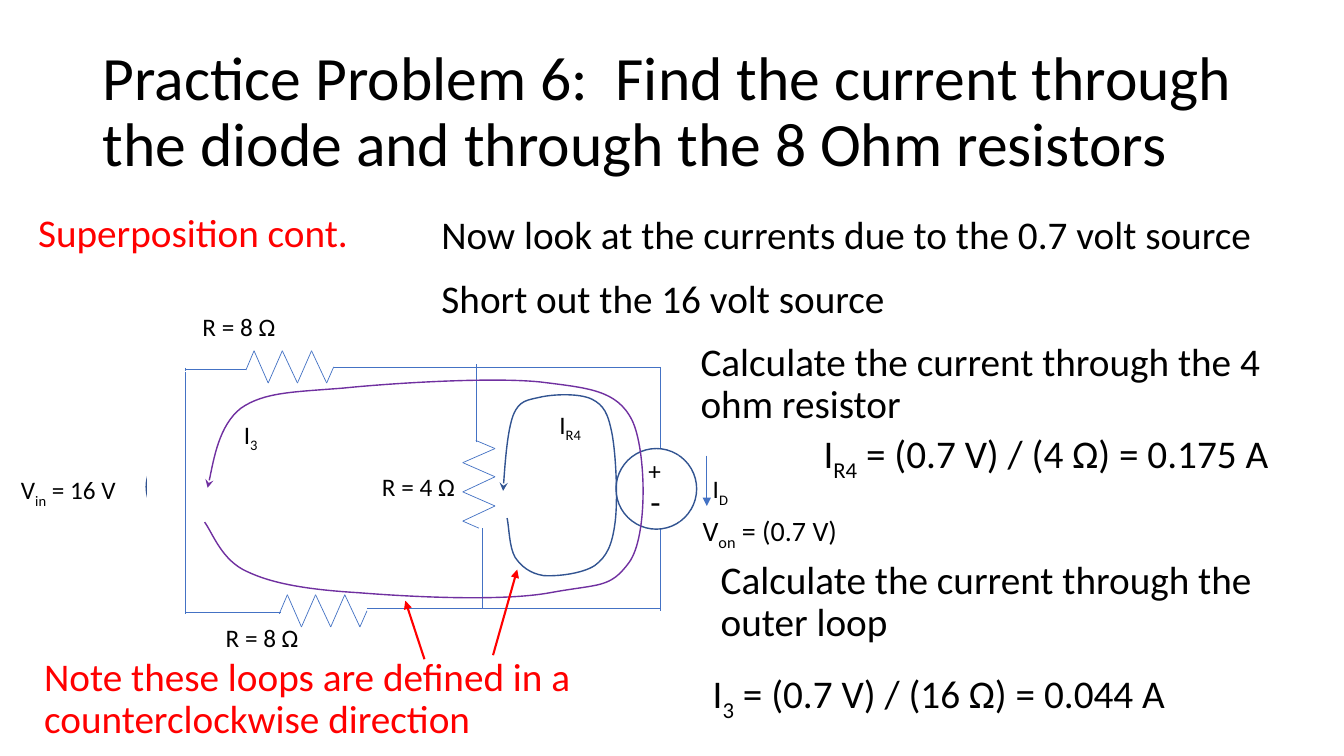
from dataclasses import dataclass
from itertools import chain, pairwise

from lxml import etree
from pptx import Presentation
from pptx.dml.color import RGBColor
from pptx.enum.shapes import MSO_CONNECTOR, MSO_SHAPE
from pptx.enum.text import MSO_ANCHOR, MSO_AUTO_SIZE, PP_ALIGN
from pptx.oxml.ns import qn
from pptx.shapes.autoshape import Shape
from pptx.shapes.shapetree import SlideShapes
from pptx.text.text import TextFrame
from pptx.util import Pt

PX = 9144
FONT = "Calibri"
TITLE_ONLY = 5
STRAIGHT = MSO_CONNECTOR.STRAIGHT
OVAL, RECTANGLE = MSO_SHAPE.OVAL, MSO_SHAPE.RECTANGLE
TOP, MIDDLE = MSO_ANCHOR.TOP, MSO_ANCHOR.MIDDLE
LEFT = PP_ALIGN.LEFT
NO_AUTOFIT, GROW = MSO_AUTO_SIZE.NONE, MSO_AUTO_SIZE.SHAPE_TO_FIT_TEXT

BLACK = RGBColor(0x00, 0x00, 0x00)
WHITE = RGBColor(0xFF, 0xFF, 0xFF)
RED = RGBColor(0xFF, 0x00, 0x00)
WIRE_BLUE = RGBColor(0x44, 0x72, 0xC4)
OUTLINE_BLUE = RGBColor(0x32, 0x54, 0x91)
PURPLE = RGBColor(0x70, 0x30, 0xA0)

Point = tuple[int, int]
Box = tuple[int, int, int, int]


@dataclass(frozen=True)
class Label:
    box: Box
    runs: tuple[str, ...]
    size: int = 18


@dataclass(frozen=True)
class Note:
    box: Box
    runs: tuple[str, ...]
    size: int = 28
    color: RGBColor = BLACK


@dataclass(frozen=True)
class Arrow:
    start: Point
    end: Point
    color: RGBColor
    width: float


@dataclass(frozen=True)
class Loop:
    start: Point
    curves: tuple[tuple[Point, Point, Point], ...]
    color: RGBColor


ZIGZAG = ((0, 0), (8, -19), (22, 13), (36, -19), (51, 13), (65, -19), (80, 13), (87, -3))
TOP_RESISTOR = [(244 + along, 367 + across) for along, across in ZIGZAG]
BOTTOM_RESISTOR = [(277 + along, 609 + across) for along, across in ZIGZAG]
MIDDLE_RESISTOR = [(472 - across, 437 + along) for along, across in ZIGZAG]

WIRES = (
    [(184, 365), (184, 443)],
    [(184, 523), (184, 608)],
    [(184, 366), (244, 366)],
    TOP_RESISTOR,
    [(331, 364), (655, 364), (655, 464)],
    [(655, 507), (655, 606)],
    [(675, 508), (635, 508)],
    [(364, 604), (655, 604)],
    MIDDLE_RESISTOR,
    [(472, 439), (472, 361)],
    [(478, 604), (478, 524)],
    BOTTOM_RESISTOR,
    [(184, 608), (279, 608)],
)
SHORTED_SOURCE_WIRE = [(184, 609), (184, 369)]

CIRCUIT_LABELS = (
    Label((11, 466, 137, 40), ("V", "in", " = 16 V")),
    Label((191, 304, 118, 40), ("R = 8 Ω",)),
    Label((697, 465, 71, 40), ("I", "D")),
    Label((369, 463, 118, 40), ("R = 4 Ω",)),
    Label((214, 612, 118, 40), ("R = 8 Ω",)),
    Label((545, 401, 50, 40), ("I", "R4")),
    Label((232, 411, 50, 40), ("I", "3")),
)
POLARITY_SIGNS = (
    Label((643, 452, 30, 30), ("+",)),
    Label((645, 477, 29, 40), ("-",), 24),
)
NOTES = (
    Note((687, 505, 157, 40), ("V", "on", " = (0.7 V)"), 20),
    Note((28, 207, 373, 70), ("Superposition cont.",), color=RED),
    Note((428, 209, 861, 68), ("Now look at the currents due to the 0.7 volt source",)),
    Note((685, 335, 639, 99), ("Calculate the current through the 4 ohm resistor",)),
    Note((428, 272, 861, 68), ("Short out the 16 volt source",)),
    Note((807, 422, 477, 56), ("I", "R4", " = (0.7 V) / (4 Ω) = 0.175 A")),
    Note((705, 551, 639, 99), ("Calculate the current through the outer loop",)),
    Note((697, 660, 477, 56), ("I", "3", " = (0.7 V) / (16 Ω) = 0.044 A")),
    Note((34, 647, 639, 99),
         ("Note these loops are defined in a counterclockwise direction",), color=RED),
)
ARROWS = (
    Arrow((701, 452), (701, 502), WIRE_BLUE, 0.5),
    Arrow((421, 654), (402, 596), RED, 1.5),
    Arrow((489, 650), (513, 565), RED, 1.5),
)
LOOPS = (
    Loop((499, 487), (
        ((500, 473), (503, 428), (509, 412)),
        ((515, 397), (523, 397), (536, 394)),
        ((549, 391), (575, 390), (587, 396)),
        ((599, 402), (603, 410), (607, 430)),
        ((611, 451), (613, 497), (610, 519)),
        ((607, 541), (602, 552), (590, 561)),
        ((578, 569), (553, 572), (539, 571)),
        ((526, 569), (517, 562), (511, 553)),
        ((505, 543), (505, 523), (503, 514)),
    ), OUTLINE_BLUE),
    Loop((206, 484), (
        ((210, 467), (217, 422), (239, 405)),
        ((262, 389), (291, 389), (341, 385)),
        ((390, 380), (488, 374), (536, 379)),
        ((584, 385), (612, 387), (627, 417)),
        ((641, 446), (643, 532), (624, 558)),
        ((605, 584), (595, 579), (546, 588)),
        ((497, 597), (405, 592), (355, 588)),
        ((305, 585), (270, 579), (245, 567)),
        ((220, 556), (211, 529), (203, 518)),
    ), PURPLE),
)


def scaled(lengths: tuple[int, ...]) -> list[int]:
    return [length * PX for length in lengths]


def write_runs(frame: TextFrame, runs: tuple[str, ...], size: int, color: RGBColor,
               fit: MSO_AUTO_SIZE = NO_AUTOFIT) -> None:
    frame.word_wrap = True
    frame.auto_size = fit
    frame.vertical_anchor = TOP
    paragraph = frame.paragraphs[0]
    paragraph.alignment = LEFT
    for index, words in enumerate(runs):
        run = paragraph.add_run()
        run.text = words
        run.font.name = FONT
        run.font.size = Pt(size)
        run.font.color.rgb = color
        if index % 2:
            run.font._element.set("baseline", "-25000")


def add_label(shapes: SlideShapes, label: Label) -> None:
    frame = shapes.add_textbox(*scaled(label.box)).text_frame
    write_runs(frame, label.runs, label.size, BLACK, GROW)


def add_note(shapes: SlideShapes, note: Note) -> None:
    frame = shapes.add_textbox(*scaled(note.box)).text_frame
    write_runs(frame, note.runs, note.size, note.color)
    frame.paragraphs[0].line_spacing = 0.9
    frame.paragraphs[0].space_before = Pt(10)


def add_white_shape(shapes: SlideShapes, kind: MSO_SHAPE, box: Box) -> Shape:
    shape = shapes.add_shape(kind, *scaled(box))
    shape.shadow.inherit = False
    shape.fill.solid()
    shape.fill.fore_color.rgb = WHITE
    shape.line.fill.background()
    return shape


def add_source(shapes: SlideShapes, box: Box) -> None:
    circle = add_white_shape(shapes, OVAL, box)
    circle.line.color.rgb = OUTLINE_BLUE
    circle.line.width = Pt(1)


def add_sign(shapes: SlideShapes, sign: Label) -> None:
    frame = add_white_shape(shapes, RECTANGLE, sign.box).text_frame
    frame.margin_left = frame.margin_right = frame.margin_top = frame.margin_bottom = 0
    write_runs(frame, sign.runs, sign.size, BLACK, GROW)


def add_line(shapes: SlideShapes, start: Point, end: Point,
             color: RGBColor, width: float) -> etree._Element:
    line = shapes.add_connector(STRAIGHT, *scaled(start + end))
    line.line.color.rgb = color
    line.line.width = Pt(width)
    properties = line.element.spPr
    etree.SubElement(properties, qn("a:effectLst"))
    return properties.find(qn("a:ln"))


def add_wire(shapes: SlideShapes, corners: list[Point]) -> None:
    for start, end in pairwise(corners):
        add_line(shapes, start, end, WIRE_BLUE, 0.5)


def add_arrow(shapes: SlideShapes, arrow: Arrow) -> None:
    outline = add_line(shapes, arrow.start, arrow.end, arrow.color, arrow.width)
    etree.SubElement(outline, qn("a:tailEnd"), type="triangle")


def add_loop(shapes: SlideShapes, loop: Loop) -> None:
    builder = shapes.build_freeform(*loop.start, scale=PX)
    builder.add_line_segments(chain.from_iterable(loop.curves), close=False)
    shape = builder.convert_to_shape()
    segments = list(shape.element.iter(qn("a:lnTo")))
    outline = segments[0].getparent()
    for first in range(0, len(segments), 3):
        curve = etree.SubElement(outline, qn("a:cubicBezTo"))
        for segment in segments[first:first + 3]:
            curve.append(segment[0])
            outline.remove(segment)
    shape.shadow.inherit = False
    shape.fill.background()
    shape.line.color.rgb = loop.color
    shape.line.width = Pt(1)
    etree.SubElement(shape.element.spPr.find(qn("a:ln")), qn("a:headEnd"), type="stealth")


def main() -> None:
    deck = Presentation()
    deck.slide_width, deck.slide_height = scaled((1333, 750))
    shapes = deck.slides.add_slide(deck.slide_layouts[TITLE_ONLY]).shapes

    title = shapes.title
    title.left, title.top, title.width, title.height = scaled((92, 40, 1150, 145))
    heading = "Practice Problem 6:  Find the current through the diode and through the 8 Ohm resistors"
    write_runs(title.text_frame, (heading,), 44, BLACK)
    title.text_frame.vertical_anchor = MIDDLE
    title.text_frame.paragraphs[0].line_spacing = 0.9

    add_source(shapes, (145, 443, 80, 80))
    for wire in WIRES:
        add_wire(shapes, wire)
    add_source(shapes, (611, 445, 80, 80))
    for sign in POLARITY_SIGNS:
        add_sign(shapes, sign)
    add_white_shape(shapes, RECTANGLE, (146, 368, 81, 231))
    add_wire(shapes, SHORTED_SOURCE_WIRE)
    for loop in LOOPS:
        add_loop(shapes, loop)
    for label in CIRCUIT_LABELS:
        add_label(shapes, label)
    for note in NOTES:
        add_note(shapes, note)
    for arrow in ARROWS:
        add_arrow(shapes, arrow)

    deck.save("out.pptx")


if __name__ == "__main__":
    main()
